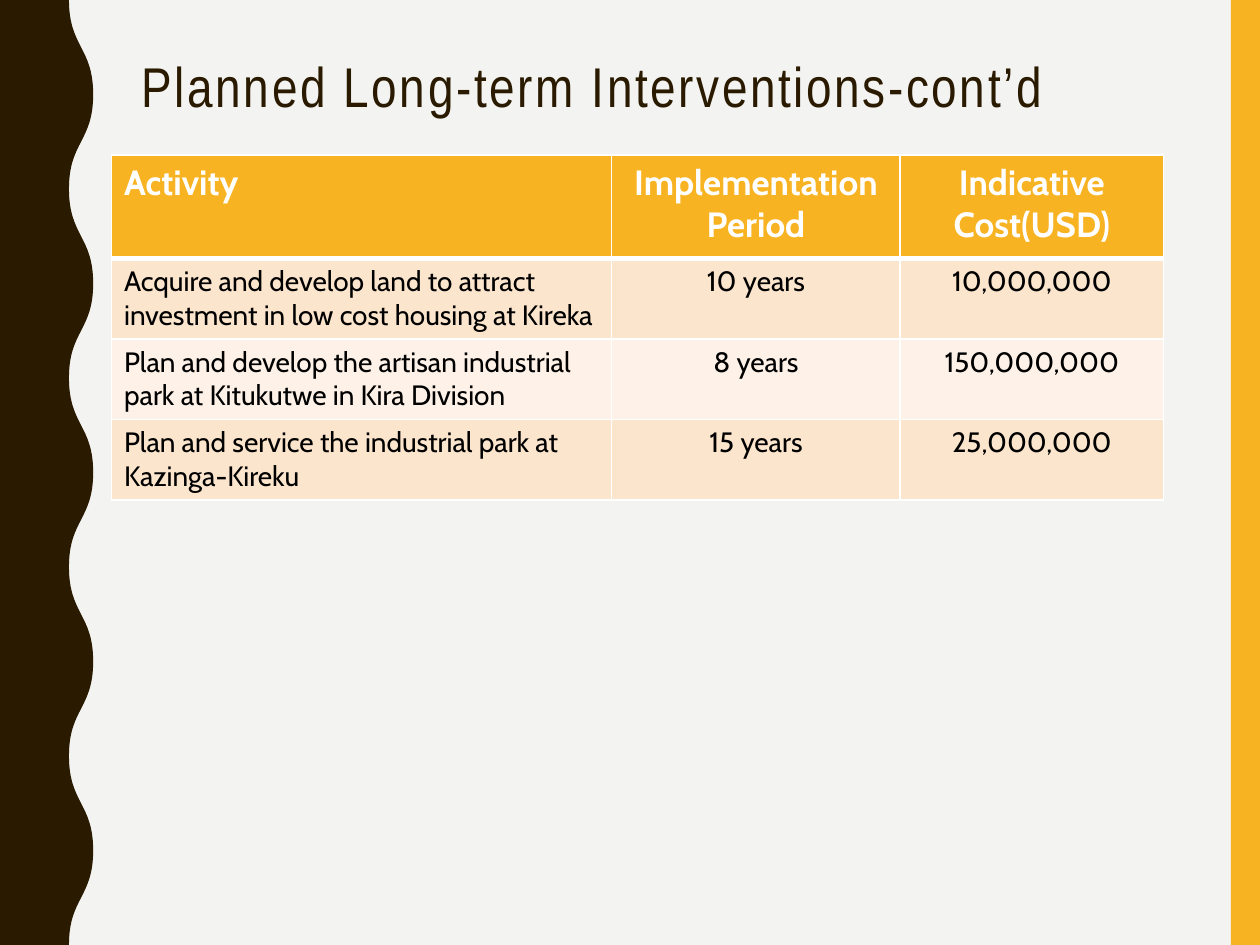
from lxml import etree
from pptx import Presentation
from pptx import util as u
from pptx.dml.color import RGBColor
from pptx.enum import shapes, text
from pptx.oxml.ns import qn

# The slide is a grid of 100 columns and 75 rows
COLS, ROWS = 100, 75
UNIT = u.Inches(0.1)
HUES = {
    "back": "F3F3F2", "gold": "F8B323", "dark": "2A1A00", "white": "FFFFFF",
    "black": "000000", "peach": "FCE5CD", "cream": "FEF2E8",
}
PLANS = [
    ("Activity", "Implementation Period", "Indicative Cost(USD)"),
    ("Acquire and develop land to attract investment in low cost housing at Kireka",
     "10 years", "10,000,000"),
    ("Plan and develop the artisan industrial park at Kitukutwe in Kira Division",
     "8 years", "150,000,000"),
    ("Plan and service the industrial park at Kazinga-Kireku",
     "15 years", "25,000,000"),
]


def hue(name):
    return RGBColor.from_string(HUES[name])


def place(*box):
    """Turn columns and rows of the grid into lengths."""
    return [int(n * UNIT) for n in box]


def paint(shape, name):
    shape.shadow.inherit = False
    shape.fill.solid()
    shape.fill.fore_color.rgb = hue(name)
    shape.line.fill.background()


def write(para, words, font, size, name, bold=False):
    run = para.add_run()
    run.text = words
    run.font.name = font
    run.font.size = u.Pt(size)
    run.font.bold = bold
    run.font.color.rgb = hue(name)
    return run


def add_bar(slide, box):
    bar = slide.shapes.add_shape(shapes.MSO_SHAPE.RECTANGLE, *place(*box))
    paint(bar, "gold")


def bend_line(line, start, end):
    """Turn a straight segment into an S curve with upright ends."""
    mid = (start[1] + end[1]) // 2
    curve = etree.Element(qn("a:cubicBezTo"))
    for x, y in ((start[0], mid), (end[0], mid), end):
        etree.SubElement(curve, qn("a:pt"), x=str(x), y=str(y))
    line.getparent().replace(line, curve)


def add_wave(slide, box, bends=10, trough=0.74):
    """Dark band whose right edge swings between trough and full width."""
    left, top, wide, high = place(*box)
    low = int(left + wide * trough)
    edge = [(left + wide if n % 2 else low, top + high * n // bends)
            for n in range(bends + 1)]
    pen = slide.shapes.build_freeform(*edge[0])
    pen.add_line_segments(edge[1:] + [(left, top + high), (left, top)],
                          close=True)
    wave = pen.convert_to_shape()
    lines = list(wave._element.iter(qn("a:lnTo")))
    for line, start, end in zip(lines, edge, edge[1:]):
        bend_line(line, (start[0] - left, start[1] - top),
                  (end[0] - left, end[1] - top))
    paint(wave, "dark")


def add_title(slide, box, words):
    frame = slide.shapes.add_textbox(*place(*box)).text_frame
    frame.word_wrap = True
    frame.vertical_anchor = text.MSO_ANCHOR.TOP
    para = frame.paragraphs[0]
    para.line_spacing = 0.9
    run = write(para, words, "Arial Narrow", 32, "dark")
    run.font._element.set("spc", "150")


def edge_cell(cell, row):
    """White borders, heavier between the head and the body."""
    props = cell._tc.get_or_add_tcPr()
    heavy = {0: "B", 1: "T"}.get(row)
    for side in "LRTB":
        size = u.Pt(3 if side == heavy else 1)
        line = etree.SubElement(props, qn("a:ln" + side), w=str(size))
        fill = etree.SubElement(line, qn("a:solidFill"))
        etree.SubElement(fill, qn("a:srgbClr"), val=HUES["white"])


def add_grid(slide, box, cols, rows):
    grid = slide.shapes.add_table(len(rows), len(cols), *place(*box)).table
    for col, wide in zip(grid.columns, place(*cols)):
        col.width = wide
    for row, high in zip(grid.rows, place(*rows)):
        row.height = high
    for r, plan in enumerate(PLANS):
        head = r == 0
        for c, words in enumerate(plan):
            cell = grid.cell(r, c)
            edge_cell(cell, r)
            cell.fill.solid()
            cell.fill.fore_color.rgb = hue(
                "gold" if head else "peach" if r % 2 else "cream")
            para = cell.text_frame.paragraphs[0]
            if c:
                para.alignment = text.PP_ALIGN.CENTER
            write(para, words, "Cabin", 20 if head else 16,
                  "white" if head else "black", head)


def main():
    deck = Presentation()
    deck.slide_width, deck.slide_height = place(COLS, ROWS)
    slide = deck.slides.add_slide(deck.slide_layouts[6])
    slide.background.fill.solid()
    slide.background.fill.fore_color.rgb = hue("back")

    # Side bands
    add_bar(slide, (97.7, 0, 2.3, ROWS))
    add_wave(slide, (0, 0, 7.4, ROWS))

    # Heading and table
    add_title(slide, (10.25, 4.2, 83.5, 16.3),
              "Planned Long-term Interventions-cont’d")
    add_grid(slide, (8.85, 12.3, 83.5, 27.4),
             cols=(39.7, 22.9, 20.9), rows=(8.2, 6.4, 6.4, 6.4))

    deck.save("out.pptx")


if __name__ == "__main__":
    main()
